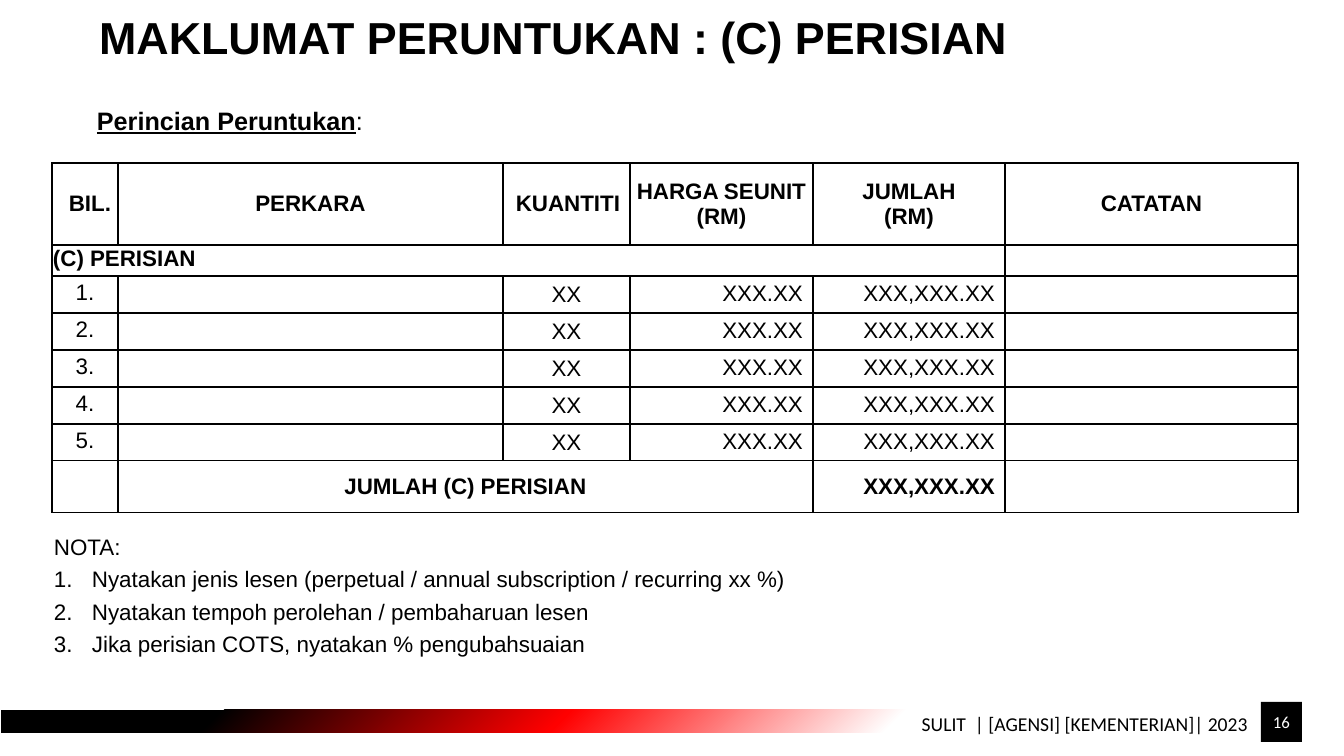
from dataclasses import dataclass
from typing import Any

import lxml.etree
import pptx
import pptx.dml.color
import pptx.enum.shapes
import pptx.enum.text
import pptx.oxml
import pptx.oxml.ns
import pptx.util

PX = 9525 * 96 / 100.8
ALIGN = pptx.enum.text.PP_ALIGN
ANCHOR = pptx.enum.text.MSO_ANCHOR
NS = pptx.oxml.ns.nsdecls("a")


@dataclass(frozen=True)
class Theme:
    black: str = "000000"
    white: str = "FFFFFF"
    red: str = "FF0000"
    body_font: str = "Arial"
    footer_font: str = "Calibri"
    title: int = 32
    heading: int = 18
    body: int = 16
    footer: int = 14
    number: int = 12


@dataclass(frozen=True)
class Box:
    left: int
    top: int
    width: int
    height: int

    def emu(self) -> list[int]:
        return [px(v) for v in (self.left, self.top, self.width, self.height)]


@dataclass(frozen=True)
class Cell:
    row: int
    col: int
    text: str
    align: Any = ALIGN.CENTER
    bold: bool = False
    span: int = 1
    indent: int = 0
    spacing: float | None = None
    anchor: Any = ANCHOR.MIDDLE
    margin: int = 1


THEME = Theme()
COLUMNS = [66, 385, 127, 183, 192, 293]
ROWS = [82, 31] + [37] * 5 + [52]
HEADERS = ["BIL.", "PERKARA", "KUANTITI", "HARGA SEUNIT\n(RM)", "JUMLAH\n(RM)", "CATATAN"]
HEADER_INDENTS = {"BIL.": 10, "KUANTITI": 3}
NOTES = [
    "Nyatakan jenis lesen (perpetual / annual subscription / recurring xx %)",
    "Nyatakan tempoh perolehan / pembaharuan lesen",
    "Jika perisian COTS, nyatakan % pengubahsuaian",
]


def px(value: int) -> int:
    return round(value * PX)


def rgb(color: str) -> pptx.dml.color.RGBColor:
    return pptx.dml.color.RGBColor.from_string(color)


def style(p: Any, size: int, name: str = THEME.body_font, color: str = THEME.black,
          bold: bool | None = None, align: Any = None) -> None:
    p.font.size = pptx.util.Pt(size)
    p.font.name = name
    p.font.color.rgb = rgb(color)
    p.font.bold = bold
    p.alignment = align


def indent(p: Any, left: int, first: int = 0) -> None:
    pPr = p._p.get_or_add_pPr()
    pPr.set("marL", str(px(left)))
    pPr.set("indent", str(px(first)))


def number(p: Any) -> None:
    bullet = pptx.oxml.parse_xml(f'<a:buAutoNum {NS} type="arabicPeriod"/>')
    p._p.get_or_add_pPr().find(pptx.oxml.ns.qn("a:defRPr")).addprevious(bullet)


def add_text(s: Any, box: Box, anchor: Any = ANCHOR.TOP) -> Any:
    tf = s.shapes.add_textbox(*box.emu()).text_frame
    tf.word_wrap = True
    tf.vertical_anchor = anchor
    return tf


def add_rect(s: Any, box: Box) -> Any:
    sp = s.shapes.add_shape(pptx.enum.shapes.MSO_SHAPE.RECTANGLE, *box.emu())
    sp.shadow.inherit = False
    sp.line.fill.background()
    return sp


def add_footer(s: Any) -> None:
    bar = add_rect(s, Box(1, 710, 1272, 23))
    bar.fill.background()
    spPr = bar._element.spPr
    stops = "".join(
        f'<a:gs pos="{pos}000"><a:srgbClr val="{color}"/></a:gs>'
        for pos, color in ((30, THEME.white), (56, THEME.red), (83, THEME.black)))
    gradient = pptx.oxml.parse_xml(
        f'<a:gradFill {NS} rotWithShape="1"><a:gsLst>{stops}</a:gsLst>'
        '<a:path path="circle"><a:fillToRect l="100000" t="100000"/></a:path></a:gradFill>')
    spPr.replace(spPr.find(pptx.oxml.ns.qn("a:noFill")), gradient)

    p = add_text(s, Box(792, 708, 466, 34), ANCHOR.MIDDLE).paragraphs[0]
    p.text = "SULIT  | [AGENSI] [KEMENTERIAN]| 2023"
    p.line_spacing = 0.9
    style(p, THEME.footer, THEME.footer_font, align=ALIGN.RIGHT)


def add_page_number(s: Any) -> None:
    sp = add_rect(s, Box(1261, 702, 41, 40))
    sp.fill.solid()
    sp.fill.fore_color.rgb = rgb(THEME.black)
    tf = sp.text_frame
    tf.vertical_anchor = ANCHOR.MIDDLE
    p = tf.paragraphs[0]
    p.text = "16"
    style(p, THEME.number, THEME.footer_font, THEME.white, align=ALIGN.CENTER)


def table_cells() -> list[Cell]:
    cells = [Cell(0, col, text, bold=True, indent=HEADER_INDENTS.get(text, 0))
             for col, text in enumerate(HEADERS)]
    cells.append(Cell(1, 0, "(C) PERISIAN", ALIGN.LEFT, True, span=5, spacing=15.7))
    for item in range(1, 6):
        row = item + 1
        cells += [
            Cell(row, 0, f"{item}.", spacing=15.7),
            Cell(row, 2, "XX"),
            Cell(row, 3, "XXX.XX", ALIGN.RIGHT, anchor=ANCHOR.TOP, margin=10),
            Cell(row, 4, "XXX,XXX.XX", ALIGN.RIGHT, anchor=ANCHOR.TOP, margin=10),
        ]
    cells.append(Cell(7, 1, "JUMLAH (C) PERISIAN", bold=True, span=3))
    cells.append(Cell(7, 4, "XXX,XXX.XX", ALIGN.RIGHT, True, margin=10))
    return cells


def frame_cell(cell: Any) -> None:
    cell.fill.background()
    cell.margin_left = cell.margin_right = cell.margin_top = cell.margin_bottom = px(1)
    style(cell.text_frame.paragraphs[0], THEME.body)
    tcPr = cell._tc.get_or_add_tcPr()
    for i, side in enumerate(("lnL", "lnR", "lnT", "lnB")):
        tcPr.insert(i, pptx.oxml.parse_xml(
            f'<a:{side} {NS} w="12700"><a:solidFill><a:srgbClr val="{THEME.black}"/>'
            f'</a:solidFill></a:{side}>'))


def fill_cell(table: Any, item: Cell) -> None:
    cell = table.cell(item.row, item.col)
    if item.span > 1:
        cell.merge(table.cell(item.row, item.col + item.span - 1))
    cell.vertical_anchor = item.anchor
    cell.margin_left = cell.margin_right = px(item.margin)
    if item.anchor == ANCHOR.TOP:
        cell.margin_top = cell.margin_bottom = px(5)
    cell.text = item.text
    for p in cell.text_frame.paragraphs:
        style(p, THEME.body, bold=item.bold, align=item.align)
        indent(p, item.indent)
        if item.spacing:
            p.line_spacing = pptx.util.Pt(item.spacing)


def add_budget_table(s: Any) -> None:
    box = Box(52, 163, sum(COLUMNS), sum(ROWS))
    table = s.shapes.add_table(len(ROWS), len(COLUMNS), *box.emu()).table
    table.first_row = table.horz_banding = False
    for column, width in zip(table.columns, COLUMNS):
        column.width = px(width)
    for row, height in zip(table.rows, ROWS):
        row.height = px(height)
    for cell in table.iter_cells():
        frame_cell(cell)
    for item in table_cells():
        fill_cell(table, item)


def add_title(s: Any) -> None:
    sp = s.shapes.title
    sp.left, sp.top, sp.width, sp.height = Box(89, 5, 1162, 81).emu()
    tf = sp.text_frame
    tf.auto_size = pptx.enum.text.MSO_AUTO_SIZE.NONE
    tf.vertical_anchor = ANCHOR.TOP
    p = tf.paragraphs[0]
    p.text = "MAKLUMAT PERUNTUKAN : (C) PERISIAN"
    style(p, THEME.title, bold=True, align=ALIGN.LEFT)


def add_heading(s: Any) -> None:
    p = add_text(s, Box(87, 100, 842, 40)).paragraphs[0]
    style(p, THEME.heading, align=ALIGN.JUSTIFY)
    p.space_before = pptx.util.Pt(4)
    r = p.add_run()
    r.text = "Perincian Peruntukan"
    r.font.bold = r.font.underline = True
    p.add_run().text = ":"


def add_notes(s: Any) -> None:
    tf = add_text(s, Box(44, 528, 842, 135))
    tf.text = "\n".join(["NOTA:", *NOTES])
    for i, p in enumerate(tf.paragraphs):
        style(p, THEME.body, align=ALIGN.JUSTIFY)
        p.space_before = pptx.util.Pt(4)
        if i:
            indent(p, 38, -38)
            number(p)


def main() -> None:
    prs = pptx.Presentation()
    prs.slide_width, prs.slide_height = px(1344), px(756)
    s = prs.slides.add_slide(prs.slide_layouts[5])
    for draw in (add_footer, add_budget_table, add_title, add_heading, add_notes, add_page_number):
        draw(s)
    prs.save("out.pptx")


if __name__ == "__main__":
    main()
